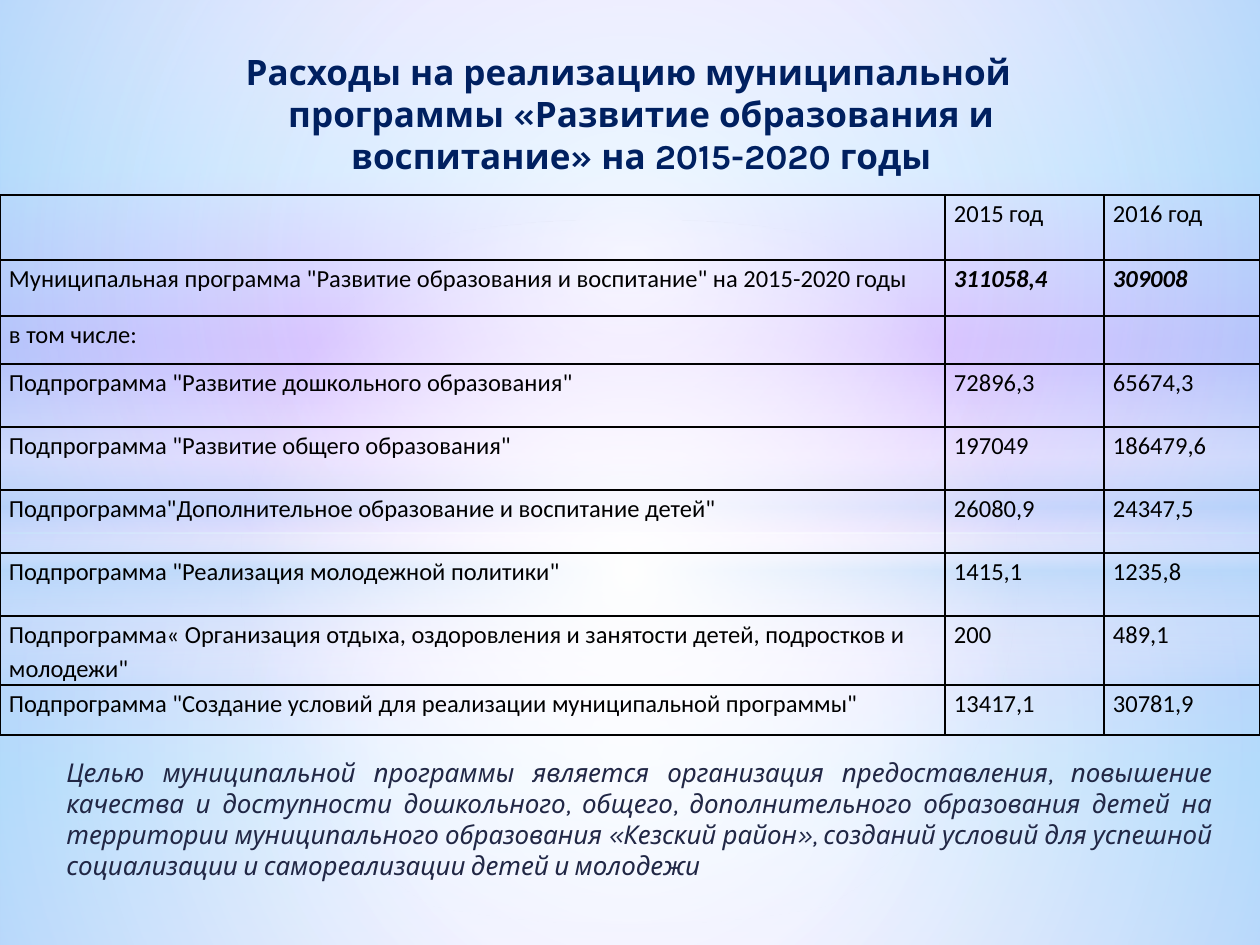
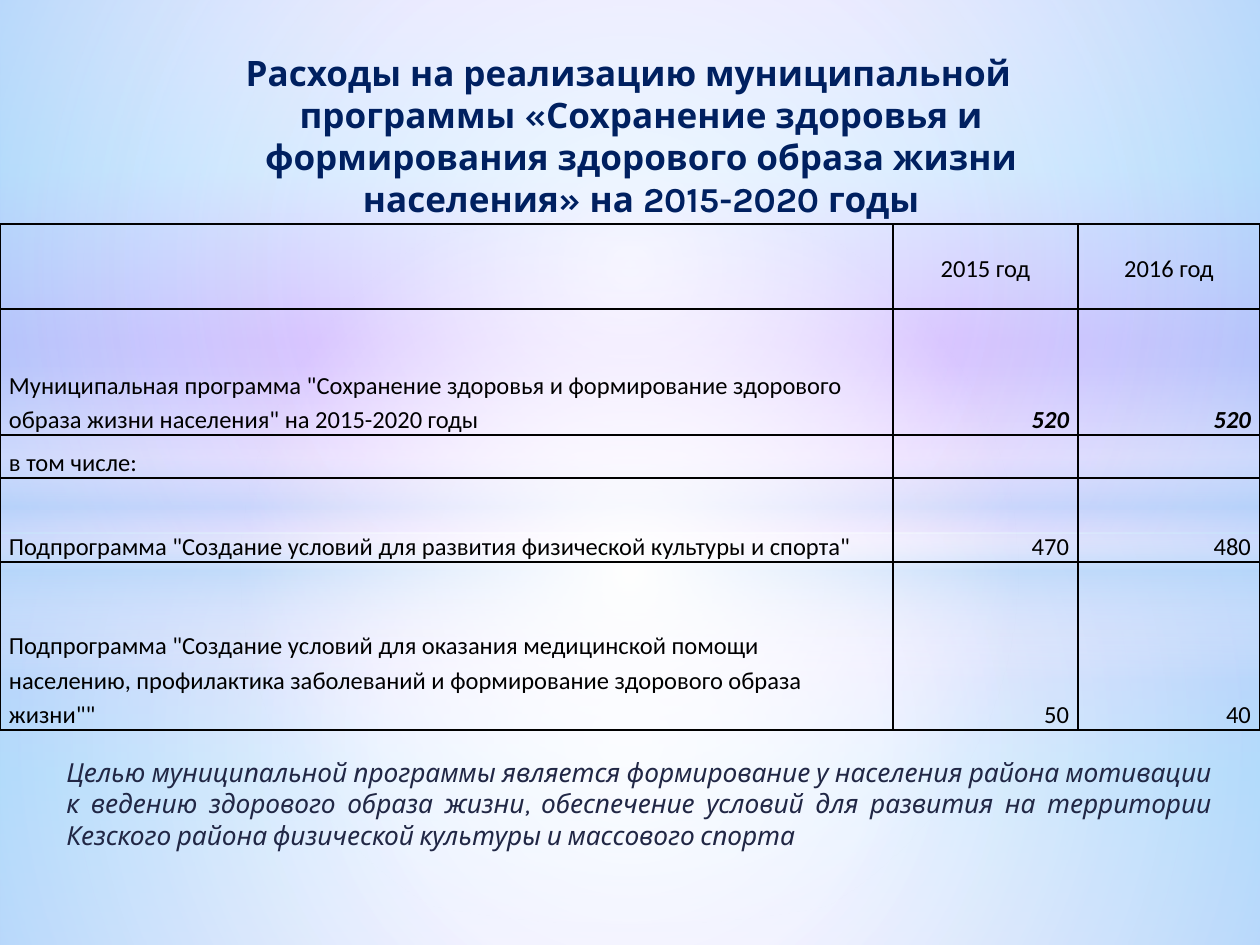
from dataclasses import dataclass

from lxml import etree
from pptx import Presentation
from pptx import util as u
from pptx.dml.color import RGBColor
from pptx.enum import shapes, text
from pptx.oxml import ns

PX_PER_INCH = 126
WIDTH, HEIGHT = 1260, 945
TITLE_ONLY = 5


@dataclass(frozen=True)
class Theme:
    """Colours, fonts and type sizes of the deck."""
    title_color: str = "002060"
    goal_color: str = "212745"
    table_color: str = "000000"
    white: str = "FFFFFF"
    sky: str = "B4DCFA"
    heading_font: str = "Karla"
    table_font: str = "Calibri"
    title_size: float = 20
    table_size: float = 14
    border_width: float = 1
    table_spacing: float = 1.15


THEME = Theme()

BACKGROUND = [(0, "CCCCFF", 100), (18, "99CCFF", 100), (36, "9966FF", 100),
              (61, "CC99FF", 100), (82, "99CCFF", 100), (100, "CCCCFF", 100)]

RECTANGLE, OVAL = shapes.MSO_SHAPE.RECTANGLE, shapes.MSO_SHAPE.OVAL
BACKDROP = [
    (RECTANGLE, (0, 533, WIDTH, 412), True,
     [(0, THEME.white, 91), (37, THEME.white, 76), (100, THEME.sky, 79)]),
    (RECTANGLE, (0, 0, WIDTH, 533), True,
     [(0, THEME.white, 89), (48, THEME.white, 62), (100, THEME.sky, 79)]),
    (RECTANGLE, (0, 365, WIDTH, 315), False,
     [(0, THEME.white, 0), (29, THEME.white, 30), (45, THEME.sky, 40),
      (55, THEME.white, 26), (65, THEME.sky, 60), (100, THEME.white, 0)]),
    (OVAL, (0, 220, WIDTH, 703), True,
     [(0, THEME.white, 100), (54, THEME.white, 0)]),
]


@dataclass(frozen=True)
class TableStyle:
    """Alignment of the header, the labels and the numbers of a table."""
    header_align: text.PP_ALIGN
    number_align: text.PP_ALIGN
    header_anchor: text.MSO_ANCHOR
    body_anchor: text.MSO_ANCHOR


TOP_LEFT = TableStyle(text.PP_ALIGN.LEFT, text.PP_ALIGN.LEFT,
                      text.MSO_ANCHOR.TOP, text.MSO_ANCHOR.TOP)
BOTTOM_RIGHT = TableStyle(text.PP_ALIGN.CENTER, text.PP_ALIGN.RIGHT,
                          text.MSO_ANCHOR.MIDDLE, text.MSO_ANCHOR.BOTTOM)

HEADER = ("", "2015 год", "2016 год")
INCLUDING = ("в том числе:", "", "")

EDUCATION = dict(
    title="Расходы на реализацию муниципальной программы «Развитие образования "
          "и воспитание» на 2015-2020 годы",
    title_box=(134, 44, 989, 139),
    table_origin=(0, 195),
    columns=(945, 159, 156),
    heights=(65, 56, 48, 63, 63, 63, 63, 69, 50),
    style=TOP_LEFT,
    rows=[
        HEADER,
        ('Муниципальная программа "Развитие образования и воспитание" на 2015-2020 годы',
         "311058,4", "309008"),
        INCLUDING,
        ('Подпрограмма "Развитие дошкольного образования"', "72896,3", "65674,3"),
        ('Подпрограмма "Развитие общего образования"', "197049", "186479,6"),
        ('Подпрограмма"Дополнительное образование и воспитание детей"',
         "26080,9", "24347,5"),
        ('Подпрограмма "Реализация молодежной политики"', "1415,1", "1235,8"),
        ('Подпрограмма« Организация отдыха, оздоровления и занятости детей, '
         'подростков и молодежи"', "200", "489,1"),
        ('Подпрограмма "Создание условий для реализации муниципальной программы"',
         "13417,1", "30781,9"),
    ],
    goal="Целью муниципальной программы является организация предоставления, "
         "повышение качества и доступности дошкольного, общего, дополнительного "
         "образования детей на территории муниципального образования «Кезский "
         "район», созданий условий для успешной социализации и самореализации "
         "детей и молодежи",
    goal_size=14.8,
)

HEALTH = dict(
    title="Расходы на реализацию муниципальной программы «Сохранение здоровья и "
          "формирования здорового образа жизни населения» на 2015-2020 годы",
    title_box=(134, 45, 989, 152),
    table_origin=(0, 224),
    columns=(893, 185, 182),
    heights=(85, 126, 43, 84, 168),
    style=BOTTOM_RIGHT,
    rows=[
        HEADER,
        ('Муниципальная программа "Сохранение здоровья и формирование здорового '
         'образа жизни населения" на 2015-2020 годы', "520", "520"),
        INCLUDING,
        ('Подпрограмма "Создание условий для развития физической культуры и спорта"',
         "470", "480"),
        ('Подпрограмма "Создание условий для оказания медицинской помощи населению, '
         'профилактика заболеваний и формирование здорового образа жизни""',
         "50", "40"),
    ],
    goal="Целью муниципальной программы является формирование у населения района "
         "мотивации к ведению здорового образа жизни, обеспечение условий для "
         "развития на территории Кезского района физической культуры и массового "
         "спорта",
    goal_size=15,
)

GOAL_BOX = (54, 750, 1171, 118)


def px(length):
    """Turn a length in px into EMU."""
    return u.Emu(round(length * u.Inches(1) / PX_PER_INCH))


def box_emu(box):
    """Turn a box in px into EMU."""
    return [px(length) for length in box]


def add_run(paragraph, words, font_name, size, color, bold=False, italic=False):
    """Add one formatted run to a paragraph."""
    run = paragraph.add_run()
    run.text = words
    font = run.font
    font.name, font.size = font_name, u.Pt(size)
    font.bold, font.italic = bold, italic
    font.color.rgb = RGBColor.from_string(color)


def add_child(parent, tag, **attributes):
    """Add an XML child with the given attributes."""
    values = {name: str(value) for name, value in attributes.items()}
    return etree.SubElement(parent, ns.qn(tag), values)


def paint_gradient(fill, element, stops, radial):
    """Give the fill inside an element the stops and direction of a gradient."""
    fill.gradient()
    gradient = element.find(".//" + ns.qn("a:gradFill"))
    for child in list(gradient):
        gradient.remove(child)
    stop_list = add_child(gradient, "a:gsLst")
    for position, color, opacity in stops:
        stop = add_child(stop_list, "a:gs", pos=position * 1000)
        color_element = add_child(stop, "a:srgbClr", val=color)
        if opacity < 100:
            add_child(color_element, "a:alpha", val=opacity * 1000)
    if radial:
        path = add_child(gradient, "a:path", path="circle")
        add_child(path, "a:fillToRect", l=50000, t=50000, r=50000, b=50000)
    else:
        add_child(gradient, "a:lin", ang=5400000, scaled=0)


def build_backdrop(slide):
    """Paint the layout of a slide with the shared background and its light bands."""
    layout = slide.slide_layout
    paint_gradient(layout.background.fill, layout.element, BACKGROUND, False)
    first_placeholder = layout.placeholders[0].element
    for number, (kind, box, radial, stops) in enumerate(BACKDROP, start=101):
        shape = slide.shapes.add_shape(kind, *box_emu(box))
        shape.shadow.inherit = False
        shape.line.fill.background()
        paint_gradient(shape.fill, shape.element, stops, radial)
        shape.element.find(".//" + ns.qn("p:cNvPr")).set("id", str(number))
        first_placeholder.addprevious(shape.element)


def format_title(slide, box, words):
    """Place and fill the title placeholder."""
    title = slide.shapes.title
    title.left, title.top, title.width, title.height = box_emu(box)
    frame = title.text_frame
    frame.auto_size = text.MSO_AUTO_SIZE.NONE
    frame.vertical_anchor = text.MSO_ANCHOR.TOP
    frame.word_wrap = True
    paragraph = frame.paragraphs[0]
    paragraph.alignment = text.PP_ALIGN.CENTER
    add_run(paragraph, words, THEME.heading_font, THEME.title_size,
            THEME.title_color, bold=True)
    properties = paragraph.runs[0].font and title.element.find(".//" + ns.qn("a:pPr"))
    properties.set("marL", str(u.Inches(0.2)))
    properties.set("indent", str(u.Inches(-0.5)))


def add_goal(slide, box, words, size):
    """Add the justified statement of the programme's goal."""
    frame = slide.shapes.add_textbox(*box_emu(box)).text_frame
    frame.word_wrap = True
    paragraph = frame.paragraphs[0]
    paragraph.alignment = text.PP_ALIGN.JUSTIFY
    paragraph.space_after = u.Pt(3)
    add_run(paragraph, words, THEME.heading_font, size, THEME.goal_color, italic=True)


def outline_cell(cell):
    """Draw all four borders of a cell and leave it unfilled."""
    properties = cell._tc.get_or_add_tcPr()
    for side in ("a:lnL", "a:lnR", "a:lnT", "a:lnB"):
        line = add_child(properties, side, w=u.Pt(THEME.border_width))
        fill = add_child(line, "a:solidFill")
        add_child(fill, "a:srgbClr", val=THEME.table_color)
    cell.fill.background()


def fill_cell(cell, words, row, column, style):
    """Format one cell according to its row and column."""
    cell.margin_left = cell.margin_right = px(9)
    cell.margin_top = cell.margin_bottom = 0
    cell.vertical_anchor = style.body_anchor if row else style.header_anchor
    outline_cell(cell)
    if not words:
        return
    paragraph = cell.text_frame.paragraphs[0]
    paragraph.line_spacing = THEME.table_spacing
    if row == 0:
        paragraph.alignment = style.header_align
    else:
        paragraph.alignment = style.number_align if column else text.PP_ALIGN.LEFT
    total = row == 1 and column > 0
    add_run(paragraph, words, THEME.table_font, THEME.table_size,
            THEME.table_color, bold=total, italic=total)


def add_expenses(slide, origin, columns, heights, rows, style):
    """Add the table of expenses by year."""
    box = (*origin, sum(columns), sum(heights))
    table = slide.shapes.add_table(len(rows), len(columns), *box_emu(box)).table
    table.first_row = table.horz_banding = False
    for column, width in zip(table.columns, columns):
        column.width = px(width)
    for row_index, (height, row) in enumerate(zip(heights, rows)):
        table.rows[row_index].height = px(height)
        for column_index, words in enumerate(row):
            fill_cell(table.cell(row_index, column_index), words,
                      row_index, column_index, style)


def build_programme(slide, programme):
    """Build one slide about a municipal programme."""
    format_title(slide, programme["title_box"], programme["title"])
    add_goal(slide, GOAL_BOX, programme["goal"], programme["goal_size"])
    add_expenses(slide, programme["table_origin"], programme["columns"],
                 programme["heights"], programme["rows"], programme["style"])


def main():
    """Build and save the presentation."""
    presentation = Presentation()
    presentation.slide_width, presentation.slide_height = px(WIDTH), px(HEIGHT)
    layout = presentation.slide_layouts[TITLE_ONLY]
    slides = [presentation.slides.add_slide(layout) for _ in range(2)]
    build_backdrop(slides[0])
    for slide, programme in zip(slides, (EDUCATION, HEALTH)):
        build_programme(slide, programme)
    presentation.save("out.pptx")


if __name__ == "__main__":
    main()
